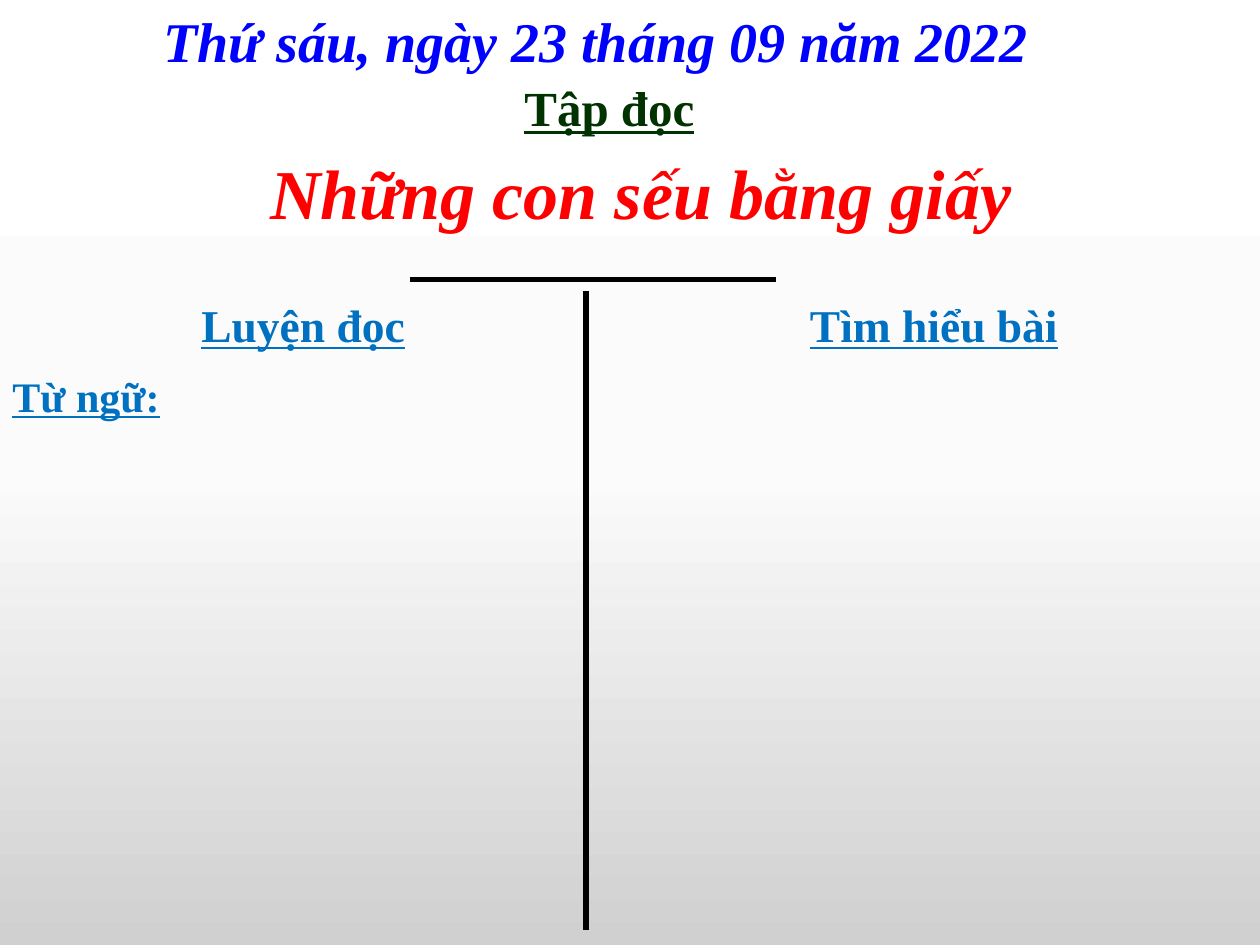
import pptx
import pptx.util
import pptx.dml.color
import pptx.enum.shapes
import pptx.enum.text
import pptx.oxml
import pptx.oxml.ns

Inches, Pt = pptx.util.Inches, pptx.util.Pt
ALIGN = pptx.enum.text.PP_ALIGN
W, H = 10, 7.5
FONT = "Times New Roman"
COLORS = {
    "date": "0000FF", "subject": "003300", "title": "FF0000",
    "heading": "0070C0", "rule": "000000",
}
BACKGROUND = [(0, "FFFFFF"), (50, "FBFBFB"), (100, "D0D0D0")]


def xml(tag, inner="", attrs=""):
    ns = pptx.oxml.ns.nsdecls("a")
    return pptx.oxml.parse_xml(f"<a:{tag} {ns} {attrs}>{inner}</a:{tag}>")


def solid(color):
    return f'<a:solidFill><a:srgbClr val="{color}"/></a:solidFill>'


def paint_background(slide):
    fill = slide.background.fill
    fill.gradient()
    fill.gradient_angle = 270
    stops = "".join(f'<a:gs pos="{pos * 1000}"><a:srgbClr val="{color}"/></a:gs>'
                    for pos, color in BACKGROUND)
    old = slide.element.find(".//" + pptx.oxml.ns.qn("a:gsLst"))
    old.getparent().replace(old, xml("gsLst", stops))


def write(sp, box, text, size, color, align=ALIGN.LEFT, wrap=True,
          italic=False, underline=False):
    sp.left, sp.top, sp.width, sp.height = map(Inches, box)
    tf = sp.text_frame
    tf.word_wrap = wrap
    tf.auto_size = pptx.enum.text.MSO_AUTO_SIZE.NONE
    tf.vertical_anchor = pptx.enum.text.MSO_ANCHOR.TOP
    p = tf.paragraphs[0]
    p.alignment = align
    r = p.add_run()
    r.text = text
    r.font.name, r.font.size = FONT, Pt(size)
    r.font.bold, r.font.italic, r.font.underline = True, italic, underline
    r.font.color.rgb = pptx.dml.color.RGBColor.from_string(COLORS[color])
    return r


def add_text(slide, box, *args, **style):
    sp = slide.shapes.add_textbox(*map(Inches, box))
    return write(sp, box, *args, **style)


def add_rule(slide, x1, y1, x2, y2):
    line = slide.shapes.add_connector(
        pptx.enum.shapes.MSO_CONNECTOR.STRAIGHT, *map(Inches, (x1, y1, x2, y2)))
    line.line.width = Pt(3)
    line.line.color.rgb = pptx.dml.color.RGBColor.from_string(COLORS["rule"])
    line._element.spPr.append(xml("effectLst"))


def add_header(slide, x, y, w, h):
    # Date, subject and lesson title, one below the other
    row = h / 3
    add_text(slide, (x + 0.12 * w, y, 0.805 * w, 0.64),
             "Thứ sáu, ngày 23 tháng 09 năm 2022", 32, "date", italic=True)
    add_text(slide, (x + 0.325 * w, y + row, 0.236 * w, row), "Tập đọc", 28,
             "subject", align=ALIGN.RIGHT, underline=True)
    r = write(slide.shapes.title, (x + 0.197 * w, y + 2 * row, 0.623 * w, 0.62),
              "Những con sếu bằng giấy", 40, "title", align=ALIGN.CENTER,
              wrap=False, italic=True)
    outline = xml("ln", solid(COLORS["title"]), f'w="{Pt(1.5)}"')
    r.font._element.insert(0, outline)


def add_board(slide, x, y, w, h):
    # Rule under the title and divider between the two columns
    top = y + 0.09
    middle = x + 0.465 * w
    add_rule(slide, x + 0.325 * w, y, x + 0.616 * w, y)
    add_rule(slide, middle, top, middle, y + h)
    # Column headings and the first entry
    for left, dy, width, height, text, size in [
        (0.15, 0, 0.208, 0.53, "Luyện đọc", 26),
        (0.633, 0, 0.225, 0.53, "Tìm hiểu bài", 26),
        (0, 0.58, 0.175, 0.5, "Từ ngữ:", 24),
    ]:
        add_text(slide, (x + left * w, top + dy, width * w, height),
                 text, size, "heading", underline=True)


def main():
    prs = pptx.Presentation()
    prs.slide_width, prs.slide_height = Inches(W), Inches(H)
    slide = prs.slides.add_slide(prs.slide_layouts.get_by_name("Title Only"))
    paint_background(slide)
    add_header(slide, 0, 0, W, 1.71)
    add_board(slide, 0, 2.22, W, 5.16)
    prs.save("out.pptx")


if __name__ == "__main__":
    main()
